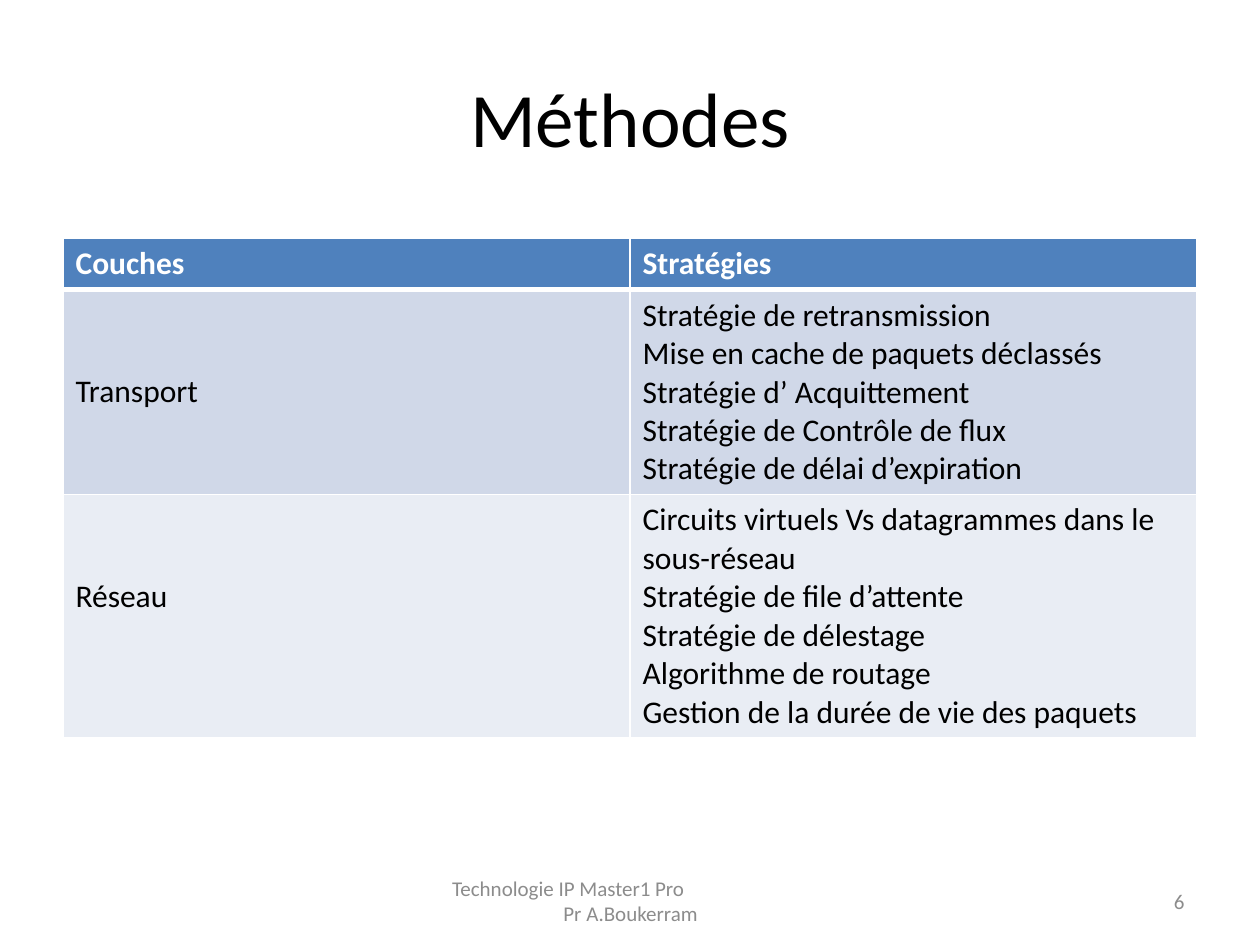
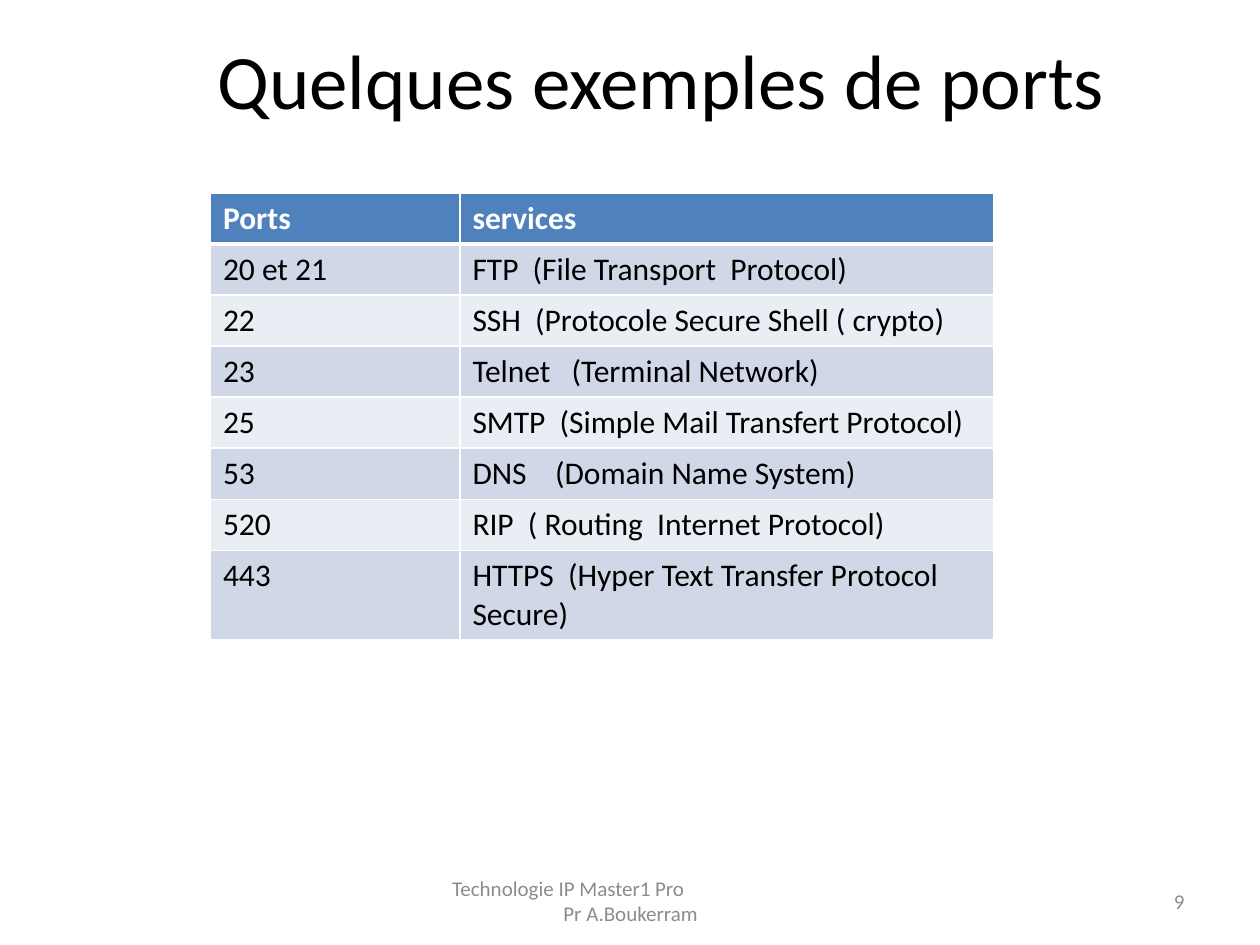
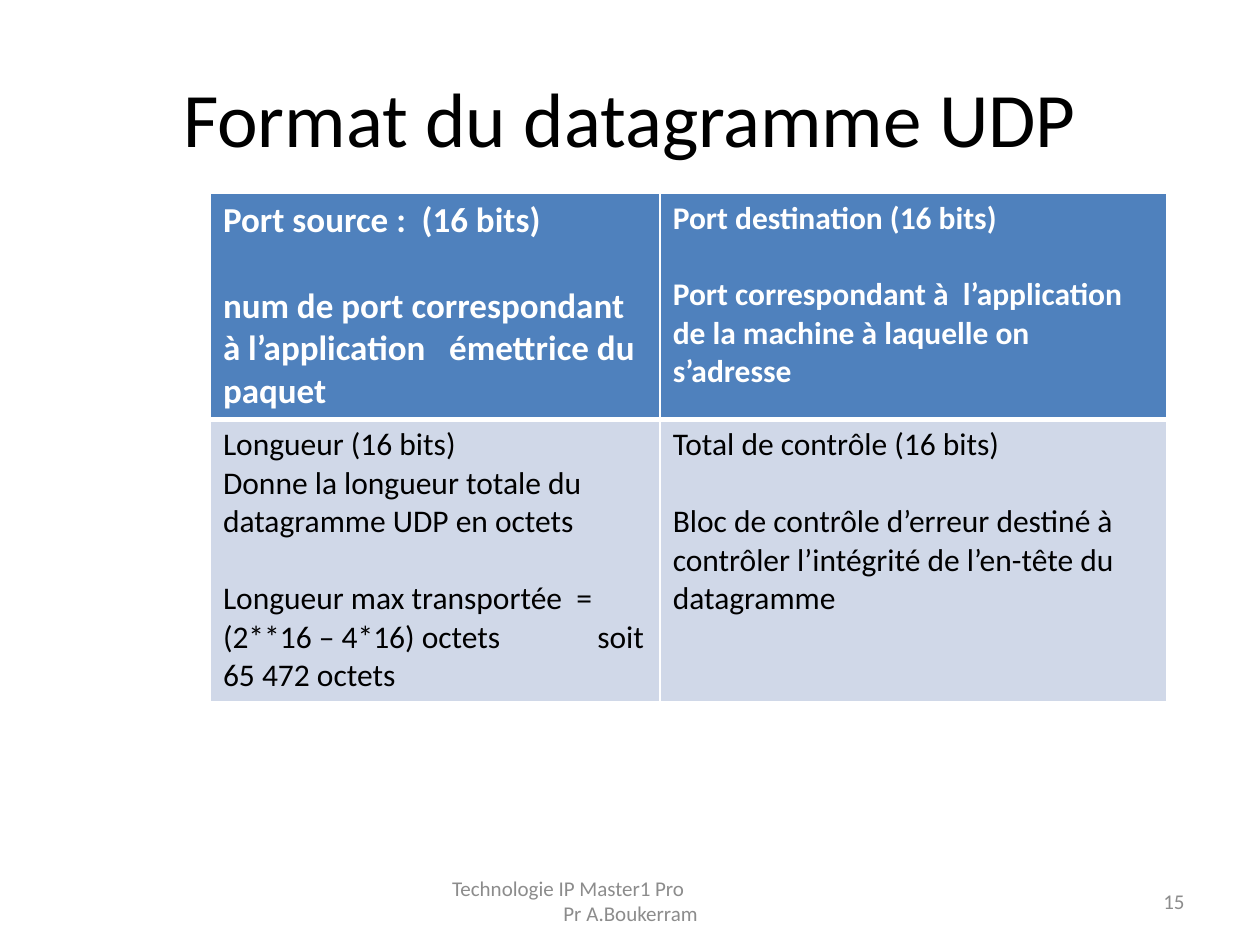
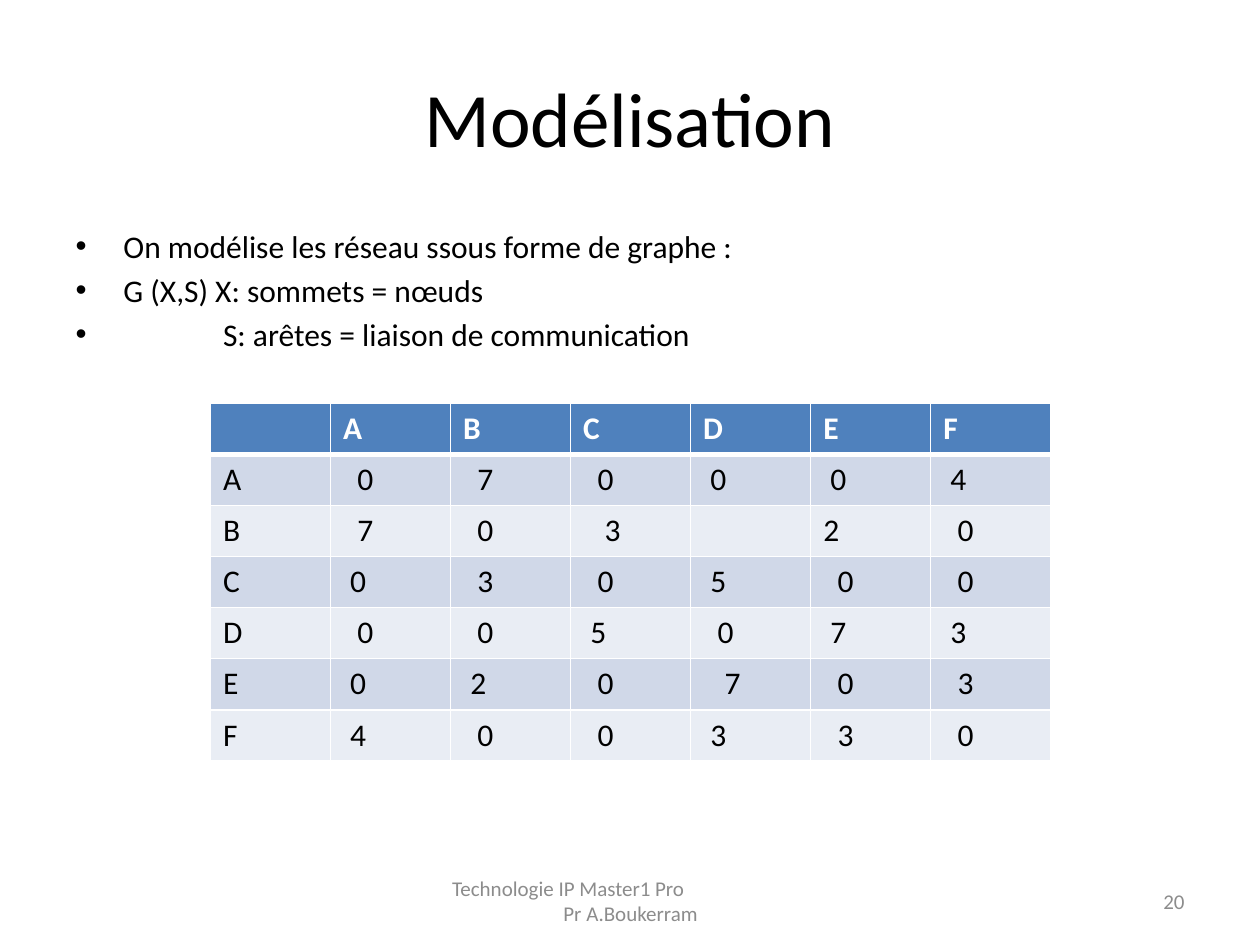
from dataclasses import dataclass

from lxml import etree
from pptx import Presentation
from pptx.dml.color import RGBColor
from pptx.enum import text
from pptx.oxml import ns
from pptx.util import Inches, Pt

FONT = "Calibri"
BLACK, WHITE, GREY = "000000", "FFFFFF", "8C8C8C"
HEADER_FILL = "4F81BD"
BAND_FILLS = ("D0D8E8", "E9EDF4")
TITLE_AT = (0.5, 0.3, 9, 1.25)
FOOTER_AT = (3.42, 6.95, 3.17, 0.4)
NUMBER_AT = (7.17, 6.95, 2.33, 0.4)
FOOTER_LINES = ("Technologie IP Master1 Pro", "Pr A.Boukerram")
LINE_HEIGHT = 1.22  # multiple of the font size
SPACE_WIDTH = 0.057  # inches, at 18 points
MARGIN_LEFT, MARGIN_TOP = 0.1, 0.05


@dataclass
class Cell:
    """Cell text, one paragraph a line; gap_at is the paragraph with a free line above."""
    text: str
    size: int = 18
    gap_at: int = -1
    lines_above: int = 0
    indent: int = 0
    tab: float = 0


NODES = "ABCDEF"
WEIGHTS = ("070004", "703 20", "030500", "005073", "020703", "400330")
WEIGHT_INDENTS = ("222111", "223002", "122122", "221211", "112322", "122122")


def matrix_rows():
    rows = [["", *NODES]]
    for node, weights, indents in zip(NODES, WEIGHTS, WEIGHT_INDENTS):
        rows.append([node] + [Cell(weight.strip(), indent=int(indent))
                              for weight, indent in zip(weights, indents)])
    return rows


SLIDES = [
    {
        "title": "Méthodes", "number": 6,
        "table_at": (0.5, 1.89), "columns": [4.5, 4.5], "heights": [0.41, 1.61, 1.93],
        "rows": [
            ["Couches", "Stratégies"],
            [Cell("Transport", lines_above=2),
             "Stratégie de retransmission\nMise en cache de paquets déclassés\n"
             "Stratégie d’ Acquittement\nStratégie de Contrôle de flux\n"
             "Stratégie de délai d’expiration"],
            [Cell("Réseau", lines_above=2),
             "Circuits virtuels Vs datagrammes dans le sous-réseau\n"
             "Stratégie de file d’attente\nStratégie de délestage\n"
             "Algorithme de routage\nGestion de la durée de vie des paquets"],
        ],
    },
    {
        "title": "Quelques exemples de ports", "number": 9, "title_at": (0.75, 0, 9, 1.25),
        "table_at": (1.67, 1.53), "columns": [1.98, 4.24], "heights": [0.4] * 7 + [0.71],
        "rows": [
            ["Ports", "services"],
            ["20 et 21", "FTP  (File Transport  Protocol)"],
            ["22", "SSH  (Protocole Secure Shell ( crypto)"],
            ["23", "Telnet   (Terminal Network)"],
            ["25", "SMTP  (Simple Mail Transfert Protocol)"],
            ["53", "DNS    (Domain Name System)"],
            ["520", "RIP  ( Routing  Internet Protocol)"],
            ["443", "HTTPS  (Hyper Text Transfer Protocol Secure)"],
        ],
    },
    {
        "title": "Format du datagramme UDP", "number": 15,
        "table_at": (1.67, 1.53), "columns": [3.57, 4.02], "heights": [1.79, 2.23],
        "rows": [
            [Cell("Port source :  (16 bits)\nnum de port correspondant à l’application   "
                  "émettrice du paquet", size=20, gap_at=1),
             Cell("Port destination (16 bits)\nPort correspondant à  l’application de la "
                  "machine à laquelle on s’adresse", gap_at=1)],
            [Cell("Longueur (16 bits)\nDonne la longueur totale du datagramme UDP en octets\n"
                  "Longueur max transportée  =\n(2**16 – 4*16) octets\tsoit 65 472 octets",
                  gap_at=2, tab=2.97),
             Cell("Total de contrôle (16 bits)\nBloc de contrôle d’erreur destiné à contrôler "
                  "l’intégrité de l’en-tête du datagramme", gap_at=1)],
        ],
    },
    {
        "title": "Modélisation", "number": 20,
        "bullets": [("On modélise les réseau ssous forme de graphe :", 0.38),
                    ("G (X,S) X: sommets = nœuds", 0.38),
                    ("S: arêtes = liaison de communication", 1.17)],
        "table_at": (1.67, 3.2), "columns": [6.67 / 7] * 7, "heights": [0.4] * 7,
        "rows": matrix_rows(),
    },
]


def color(hex_string):
    return RGBColor.from_string(hex_string)


def place(shape, box):
    shape.left, shape.top, shape.width, shape.height = map(Inches, box)


def format_runs(paragraph, size, hex_string, bold=False):
    for run in paragraph.runs:
        run.font.name, run.font.size, run.font.bold = FONT, Pt(size), bold
        run.font.color.rgb = color(hex_string)


def add_border(cell, side, points):
    line = etree.SubElement(cell._tc.get_or_add_tcPr(), ns.qn(f"a:ln{side}"), w=str(Pt(points)))
    fill = etree.SubElement(line, ns.qn("a:solidFill"))
    etree.SubElement(fill, ns.qn("a:srgbClr"), val=WHITE)


def add_tab_stop(paragraph, position):
    stops = etree.SubElement(paragraph._p.get_or_add_pPr(), ns.qn("a:tabLst"))
    etree.SubElement(stops, ns.qn("a:tab"), pos=str(Inches(position)), algn="l")


def fill_cell(cell, content, row):
    if isinstance(content, str):
        content = Cell(content)
    is_header = row == 0
    for side in "LRTB":
        thick = (is_header and side == "B") or (row == 1 and side == "T")
        add_border(cell, side, 3 if thick else 1)
    cell.fill.solid()
    cell.fill.fore_color.rgb = color(HEADER_FILL if is_header else BAND_FILLS[(row - 1) % 2])

    line_height = content.size * LINE_HEIGHT
    cell.margin_left = Inches(MARGIN_LEFT + content.indent * SPACE_WIDTH)
    cell.margin_top = Inches(MARGIN_TOP) + Pt(content.lines_above * line_height)
    cell.text_frame.text = content.text
    for index, paragraph in enumerate(cell.text_frame.paragraphs):
        format_runs(paragraph, content.size, WHITE if is_header else BLACK, is_header)
        if index == content.gap_at:
            paragraph.space_before = Pt(line_height)
        if "\t" in paragraph.text:
            add_tab_stop(paragraph, content.tab)


def add_grid(slide, data):
    columns, heights, rows = data["columns"], data["heights"], data["rows"]
    box = (*data["table_at"], sum(columns), sum(heights))
    table = slide.shapes.add_table(len(rows), len(columns), *map(Inches, box)).table
    for column, width in zip(table.columns, columns):
        column.width = Inches(width)
    for table_row, height in zip(table.rows, heights):
        table_row.height = Inches(height)
    for row, contents in enumerate(rows):
        for column, content in enumerate(contents):
            fill_cell(table.cell(row, column), content, row)


def add_footer_text(slide, box, lines, alignment):
    shape = slide.shapes.add_textbox(*map(Inches, box))
    frame = shape.text_frame
    frame.word_wrap = True
    frame.vertical_anchor = text.MSO_ANCHOR.MIDDLE
    frame.text = "\n".join(lines)
    for paragraph in frame.paragraphs:
        paragraph.alignment = alignment
        format_runs(paragraph, 12, GREY)
    return frame


def add_footer(slide, number):
    add_footer_text(slide, NUMBER_AT, [str(number)], text.PP_ALIGN.RIGHT)
    footer = add_footer_text(slide, FOOTER_AT, FOOTER_LINES, text.PP_ALIGN.CENTER)
    first_line = footer.paragraphs[0]
    first_line.alignment = text.PP_ALIGN.LEFT
    first_line._p.get_or_add_pPr().set("marL", str(Inches(0.07)))


def fill_bullets(body, bullets):
    place(body, (0.5, 1.75, 9, 4.95))
    body.text_frame.text = "\n".join(line for line, _ in bullets)
    for paragraph, (_, indent) in zip(body.text_frame.paragraphs, bullets):
        properties = paragraph._p.get_or_add_pPr()
        properties.set("marL", str(Inches(indent)))
        properties.set("indent", str(-Inches(indent)))
        format_runs(paragraph, 18, BLACK)


def add_slide(presentation, data):
    layout = presentation.slide_layouts[1 if "bullets" in data else 5]
    slide = presentation.slides.add_slide(layout)
    title = slide.shapes.title
    place(title, data.get("title_at", TITLE_AT))
    title.text_frame.text = data["title"]
    format_runs(title.text_frame.paragraphs[0], 44, BLACK)
    if "bullets" in data:
        fill_bullets(slide.placeholders[1], data["bullets"])
    add_grid(slide, data)
    add_footer(slide, data["number"])


def main():
    presentation = Presentation()
    presentation.slide_width, presentation.slide_height = Inches(10), Inches(7.5)
    for data in SLIDES:
        add_slide(presentation, data)
    presentation.save("out.pptx")


if __name__ == "__main__":
    main()
